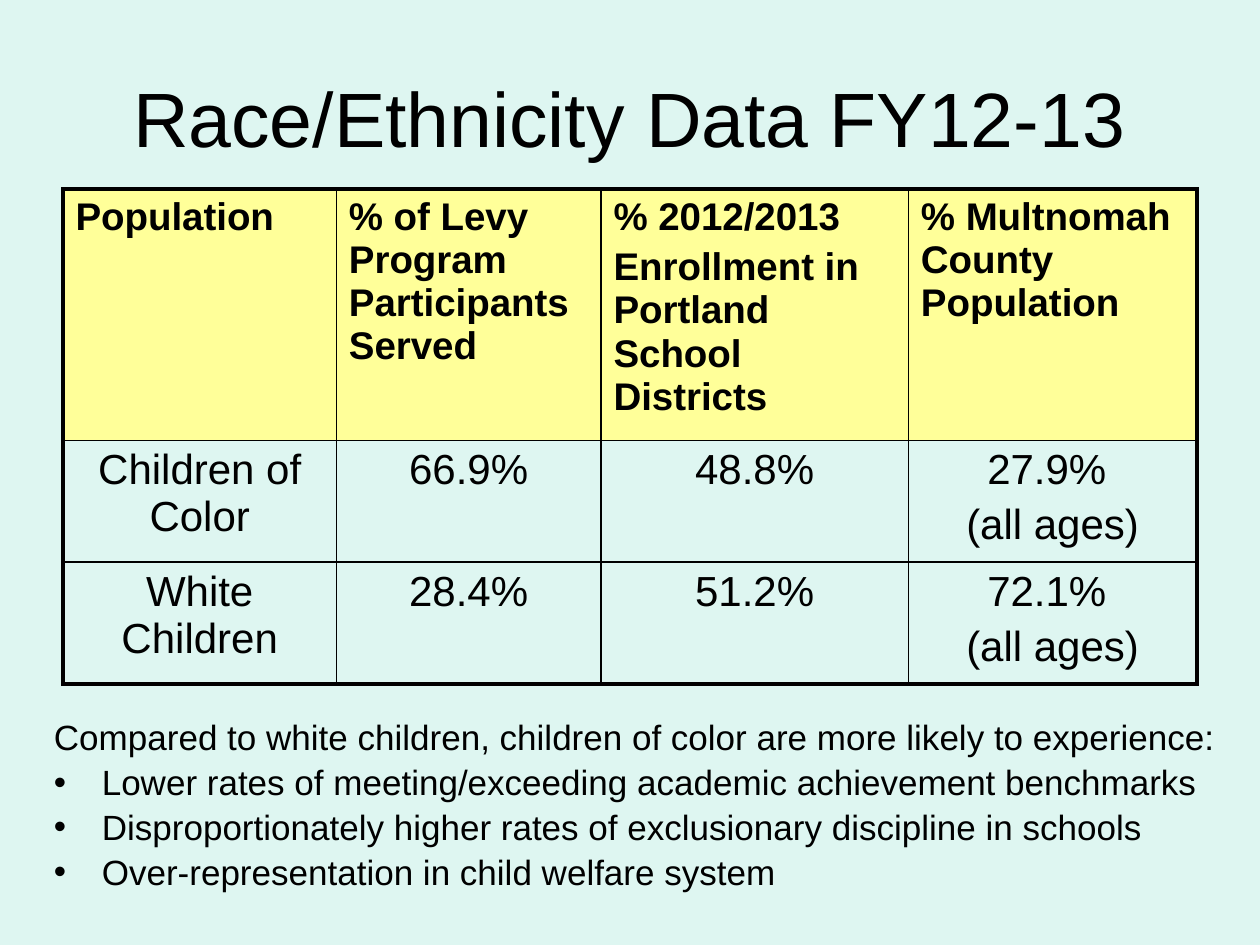
from dataclasses import dataclass

from lxml import etree
from pptx import Presentation
from pptx.dml.color import RGBColor
from pptx.enum.text import MSO_ANCHOR, PP_ALIGN
from pptx.oxml.ns import qn
from pptx.util import Inches, Pt

CENTER, LEFT = PP_ALIGN.CENTER, PP_ALIGN.LEFT
MIDDLE = MSO_ANCHOR.MIDDLE


@dataclass(frozen=True)
class Theme:
    font: str = "Arial"
    text: str = "000000"
    background: str = "DEF6F1"
    header: str = "FFFF99"
    title_size: int = 44
    header_size: int = 22
    cell_size: int = 24
    body_size: int = 20
    space_share: float = 0.2
    outer_line: float = 2.25
    inner_line: float = 1


THEME = Theme()
COLUMN_WIDTHS = (2.17, 2.1, 2.44, 2.29)
ROW_HEIGHTS = (1.44, 0.95, 0.95)
ROWS = (
    ("Population", "% of Levy Program Participants Served",
     "% 2012/2013\nEnrollment in Portland School Districts",
     "% Multnomah County Population"),
    ("Children of Color", "66.9%", "48.8%", "27.9% \n(all ages)"),
    ("White Children", "28.4%", "51.2%", "72.1% \n(all ages)"),
)
INTRODUCTION = "Compared to white children, children of color are more likely to experience:"
OUTCOMES = (
    "Lower rates of meeting/exceeding academic achievement benchmarks",
    "Disproportionately higher rates of exclusionary discipline in schools",
    "Over-representation in child welfare system",
)


def format_text(text_frame, size, alignment=LEFT, bold=False, space_share=0):
    for paragraph in text_frame.paragraphs:
        paragraph.alignment = alignment
        paragraph.space_before = Pt(size * space_share)
        for run in paragraph.runs:
            run.font.name = THEME.font
            run.font.size = Pt(size)
            run.font.bold = bold
            run.font.color.rgb = RGBColor.from_string(THEME.text)


def add_text(slide, box, text):
    shape = slide.shapes.add_textbox(*map(Inches, box))
    shape.text_frame.word_wrap = True
    shape.text_frame.text = text
    return shape.text_frame


def add_title(slide, box, text):
    text_frame = add_text(slide, box, text)
    text_frame.vertical_anchor = MIDDLE
    format_text(text_frame, THEME.title_size, CENTER)


def set_borders(cell, widths):
    """Draw the cell's left, right, top and bottom lines, widths in points."""
    properties = cell._tc.get_or_add_tcPr()
    for index, (side, width) in enumerate(zip("LRTB", widths)):
        line = etree.Element(qn(f"a:ln{side}"), w=str(Pt(width)))
        fill = etree.SubElement(line, qn("a:solidFill"))
        etree.SubElement(fill, qn("a:srgbClr"), val=THEME.text)
        properties.insert(index, line)


def fill_cell(cell, text, is_header):
    cell.text_frame.text = text
    if is_header:
        cell.fill.solid()
        cell.fill.fore_color.rgb = RGBColor.from_string(THEME.header)
        format_text(cell.text_frame, THEME.header_size, LEFT, True, THEME.space_share)
    else:
        cell.fill.background()
        format_text(cell.text_frame, THEME.cell_size, CENTER, False, THEME.space_share)


def add_data_table(slide, box):
    last_row, last_column = len(ROWS) - 1, len(COLUMN_WIDTHS) - 1
    frame = slide.shapes.add_table(len(ROWS), len(COLUMN_WIDTHS), *map(Inches, box))
    table = frame.table
    for column, width in zip(table.columns, COLUMN_WIDTHS):
        column.width = Inches(width)
    for row, height in zip(table.rows, ROW_HEIGHTS):
        row.height = Inches(height)
    frame.height = Inches(box[3])
    for r, texts in enumerate(ROWS):
        for c, text in enumerate(texts):
            cell = table.cell(r, c)
            fill_cell(cell, text, r == 0)
            on_edge = (c == 0, c == last_column, r == 0, r == last_row)
            set_borders(cell, [THEME.outer_line if edge else THEME.inner_line
                               for edge in on_edge])


def set_indent(paragraph, bulleted):
    properties = paragraph._p.get_or_add_pPr()
    indent = Inches(0.38)
    properties.set("marL", str(indent))
    properties.set("indent", str(-indent))
    if bulleted:
        etree.SubElement(properties, qn("a:buFont"), typeface=THEME.font)
        etree.SubElement(properties, qn("a:buChar"), char="•")
    else:
        etree.SubElement(properties, qn("a:buNone"))


def add_outcomes(slide, box):
    text_frame = add_text(slide, box, "\n".join((INTRODUCTION, *OUTCOMES)))
    format_text(text_frame, THEME.body_size, space_share=THEME.space_share)
    for index, paragraph in enumerate(text_frame.paragraphs):
        paragraph.line_spacing = 0.9
        set_indent(paragraph, bulleted=index > 0)


def main():
    presentation = Presentation()
    presentation.slide_width, presentation.slide_height = Inches(10), Inches(7.5)
    slide = presentation.slides.add_slide(presentation.slide_layouts[6])
    slide.background.fill.solid()
    slide.background.fill.fore_color.rgb = RGBColor.from_string(THEME.background)
    add_title(slide, (0.5, 0.3, 9, 1.25), "Race/Ethnicity Data FY12-13")
    add_data_table(slide, (0.5, 1.5, 9, 3.97))
    add_outcomes(slide, (0.33, 5.67, 9.67, 1.5))
    presentation.save("out.pptx")


if __name__ == "__main__":
    main()
